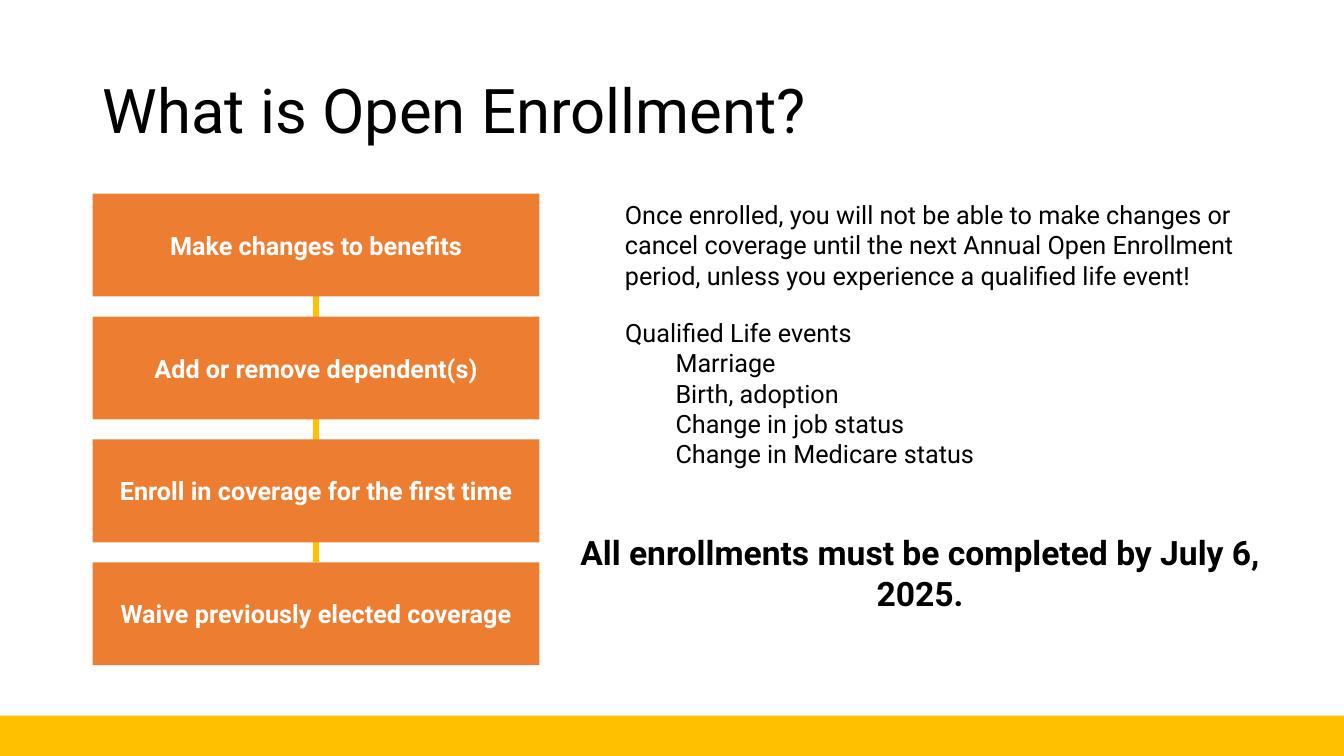
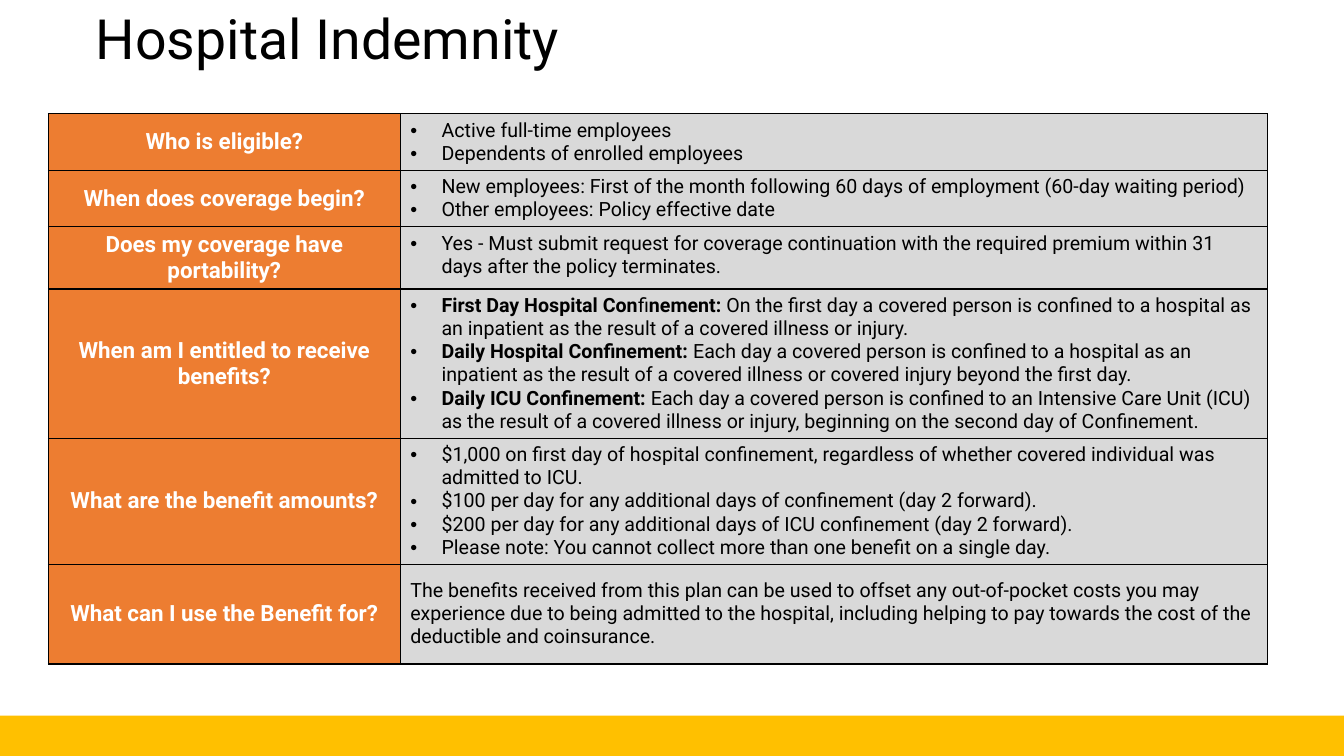
from lxml import etree
from pptx import Presentation, util as u
from pptx.dml.color import RGBColor
from pptx.enum import shapes, text
from pptx.oxml.ns import qn

INK = {"black": "000000", "white": "FFFFFF", "orange": "ED7D31",
       "gold": "FFC000", "gray": "D9D9D9"}
FONT = "Roboto"
LEFT, MID = text.PP_ALIGN.LEFT, text.PP_ALIGN.CENTER

STEPS = ["Make changes to benefits", "Add or remove dependent(s)",
         "Enroll in coverage for the first time", "Waive previously elected coverage"]
RULE = ("Once enrolled, you will not be able to make changes or cancel coverage until "
        "the next Annual Open Enrollment period, unless you experience a qualified life event!")
EVENTS = ["Marriage", "Birth, adoption", "Change in job status", "Change in Medicare status"]

FACTS = [
    ("Who is eligible?", 0.53, [
        [("Active full-time employees", False)],
        [("Dependents of enrolled employees", False)]]),
    ("When does coverage begin?", 0.53, [
        [("New employees: First of the month following 60 days of employment "
          "(60-day waiting period)", False)],
        [("Other employees: Policy effective date", False)]]),
    ("Does my coverage have portability?", 0.53, [
        [("Yes - Must submit request for coverage continuation with the required premium "
          "within 31 days after the policy terminates.", False)]]),
    ("When am I entitled to receive benefits?", 1.39, [
        [("First Day Hospital Con", True), ("fi", False), ("nement: ", True),
         ("On the first day a covered person is confined to a hospital as an inpatient "
          "as the result of a covered illness or injury.", False)],
        [("Daily Hospital Confinement: ", True),
         ("Each day a covered person is confined to a hospital as an inpatient as the "
          "result of a covered illness or covered injury beyond the first day.", False)],
        [("Daily ICU Confinement: ", True),
         ("Each day a covered person is confined to an Intensive Care Unit (ICU) as the "
          "result of a covered illness or injury, beginning on the second day of "
          "Confinement.", False)]]),
    ("What are the benefit amounts?", 1.18, [
        [("$1,000 on first day of hospital confinement, regardless of whether covered "
          "individual was admitted to ICU.", False)],
        [("$100 per day for any additional days of confinement (day 2 forward).", False)],
        [("$200 per day for any additional days of ICU confinement (day 2 forward).", False)],
        [("Please note: You cannot collect more than one benefit on a single day.", False)]]),
    ("What can I use the Benefit for?", 0.99, [
        [("The benefits received from this plan can be used to offset any out-of-pocket "
          "costs you may experience due to being admitted to the hospital, including "
          "helping to pay towards the cost of the deductible and coinsurance.", False)]]),
]


def tint(name):
    return RGBColor.from_string(INK[name])


class Deck:
    """Holds the shared style and the current slide."""

    def __init__(self):
        self.prs = Presentation()
        self.prs.slide_width = u.Inches(13.33)
        self.prs.slide_height = u.Inches(7.5)
        self.slide = None

    def start(self, layout, title, spot, size):
        self.slide = self.prs.slides.add_slide(self.prs.slide_layouts[layout])
        frame = self.place(self.slide.shapes.title, spot)
        frame.vertical_anchor = text.MSO_ANCHOR.MIDDLE
        para = self.put(frame, [[(title, False)]], size)[0]
        para.line_spacing = 0.9
        self.box((0, 7.1, 13.33, 0.4), "gold")

    def place(self, shape, spot):
        shape.left, shape.top, shape.width, shape.height = map(u.Inches, spot)
        frame = shape.text_frame
        frame.word_wrap = True
        frame.auto_size = text.MSO_AUTO_SIZE.NONE
        return frame

    def put(self, frame, lines, size, color="black", align=LEFT):
        paras = []
        for n, line in enumerate(lines):
            para = frame.add_paragraph() if n else frame.paragraphs[0]
            para.alignment = align
            para.space_before = u.Pt(0)
            for words, bold in line:
                run = para.add_run()
                run.text = words
                font = run.font
                font.name, font.size, font.bold = FONT, u.Pt(size), bold
                font.color.rgb = tint(color)
            paras.append(para)
        return paras

    def indent(self, para, left, hang=0, mark=None):
        props = para._p.get_or_add_pPr()
        props.set("marL", str(u.Inches(left)))
        props.set("indent", str(u.Inches(-hang)))
        if mark:
            etree.SubElement(props, qn("a:buFont"), typeface="Arial")
            etree.SubElement(props, qn("a:buChar"), char=mark)
        else:
            etree.SubElement(props, qn("a:buNone"))

    def box(self, spot, fill, words=None):
        shape = self.slide.shapes.add_shape(
            shapes.MSO_SHAPE.RECTANGLE, *map(u.Inches, spot))
        shape.shadow.inherit = False
        shape.fill.solid()
        shape.fill.fore_color.rgb = tint(fill)
        shape.line.fill.background()
        if words:
            shape.text_frame.vertical_anchor = text.MSO_ANCHOR.MIDDLE
            self.put(shape.text_frame, [[(words, True)]], 18, "white", MID)
        return shape

    def line(self, start, end, color, width):
        line = self.slide.shapes.add_connector(
            shapes.MSO_CONNECTOR.STRAIGHT, *map(u.Inches, start + end))
        line.line.color.rgb = tint(color)
        line.line.width = u.Pt(width)
        etree.SubElement(line._element.spPr, qn("a:effectLst"))
        return line

    def note(self, spot, words, size, bold=False, align=LEFT):
        shape = self.slide.shapes.add_textbox(*map(u.Inches, spot))
        self.put(self.place(shape, spot), [[(words, bold)]], size, align=align)

    def group(self, spot, head, items, size):
        frame = self.place(self.slide.placeholders[1], spot)
        lines = [[(words, False)] for words in [head] + items]
        for n, para in enumerate(self.put(frame, lines, size)):
            para.level = min(n, 1)
            self.indent(para, 0.5 * para.level)

    def cell(self, cell, fill, middle):
        cell.fill.solid()
        cell.fill.fore_color.rgb = tint(fill)
        if middle:
            cell.vertical_anchor = text.MSO_ANCHOR.MIDDLE
        props = cell._tc.get_or_add_tcPr()
        for n, side in enumerate("LRTB"):
            edge = etree.Element(qn("a:ln" + side), w=str(u.Pt(1)))
            ink = etree.SubElement(edge, qn("a:solidFill"))
            etree.SubElement(ink, qn("a:srgbClr"), val=INK["black"])
            props.insert(n, edge)

    def table(self, spot, widths, facts):
        grid = self.slide.shapes.add_table(
            len(facts), len(widths), *map(u.Inches, spot)).table
        grid.first_row = grid.horz_banding = False
        for col, width in zip(grid.columns, widths):
            col.width = u.Inches(width)
        for n, (ask, height, lines) in enumerate(facts):
            grid.rows[n].height = u.Inches(height)
            key, reply = grid.cell(n, 0), grid.cell(n, 1)
            last = n == len(facts) - 1
            self.cell(key, "orange", True)
            self.cell(reply, "gray", last)
            self.put(key.text_frame, [[(ask, True)]], 16, "white", MID)
            for para in self.put(reply.text_frame, lines, 14):
                if not last:
                    self.indent(para, 0.31, 0.31, "•")


def main():
    deck = Deck()

    deck.start(1, "What is Open Enrollment?", (0.92, 0.4, 11.5, 1.45), 44)
    link = deck.line((3.13, 2.94), (3.13, 5.59), "gold", 4.5)
    steps = [deck.box((0.92, 1.92 + 1.22 * n, 4.43, 1.02), "orange", words)
             for n, words in enumerate(STEPS)]
    link.begin_connect(steps[0], 2)
    link.end_connect(steps[-1], 0)
    deck.note((6.1, 1.93, 6.67, 1.01), RULE, 18)
    deck.group((6.1, 3.1, 6.67, 1.62), "Qualified Life events", EVENTS, 18)
    deck.note((5.48, 5.23, 7.29, 0.5),
              "All enrollments must be completed by July 6, 2025.", 24, True, MID)

    deck.start(5, "Hospital Indemnity", (0.85, 0.09, 11.5, 0.64), 39.6)
    deck.table((0.48, 1.13, 12.09, 5.15), (3.49, 8.6), FACTS)

    deck.prs.save("out.pptx")


if __name__ == "__main__":
    main()
